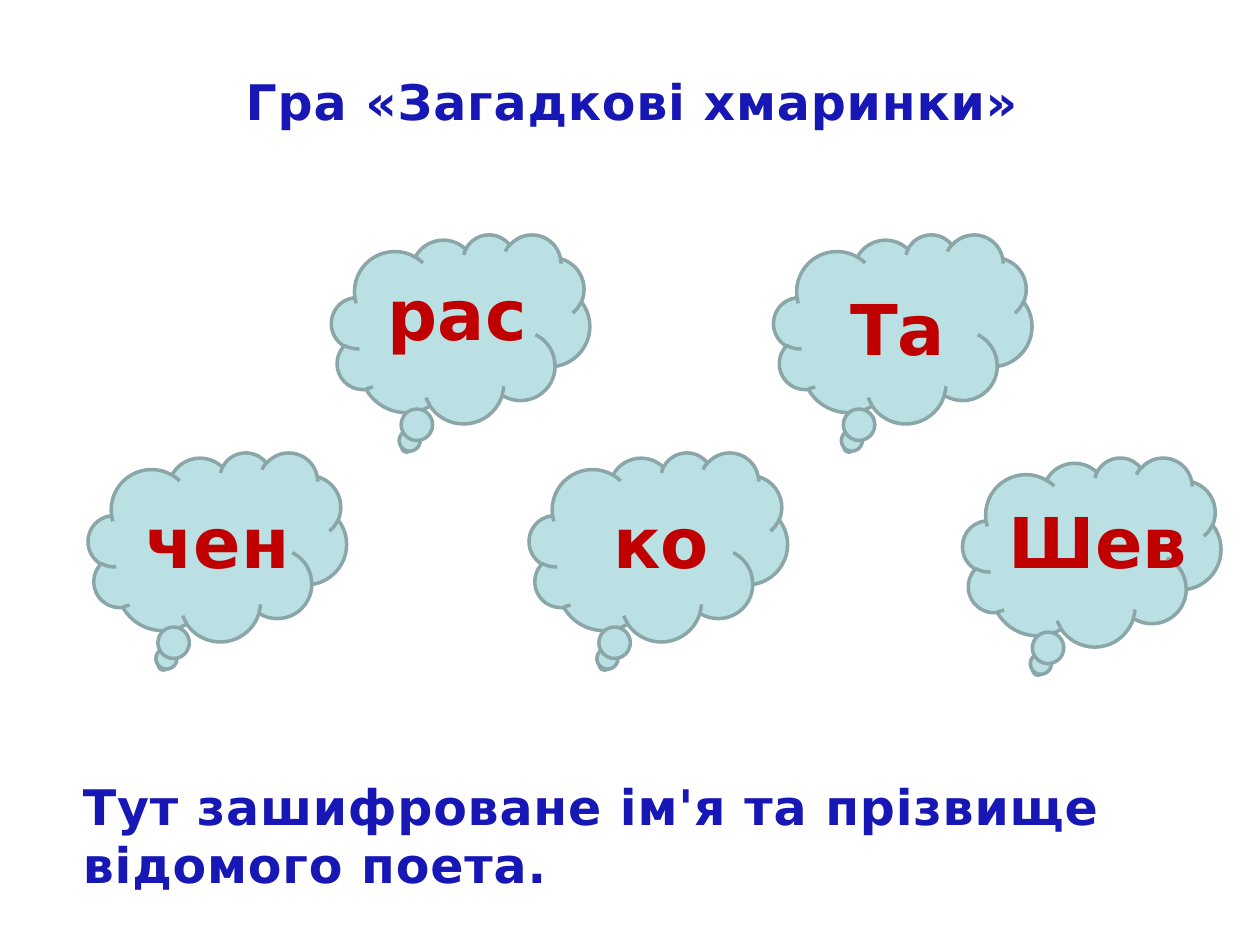
import dataclasses

import pptx
import pptx.dml.color
import pptx.enum.shapes
import pptx.enum.text
import pptx.util

Pt = pptx.util.Pt
RGB = pptx.dml.color.RGBColor.from_string


@dataclasses.dataclass(frozen=True)
class Theme:
    font: str = "DejaVu Sans"
    head: str = "1717B5"
    word: str = "C00000"
    cloud: str = "BBE0E3"
    edge: str = "8AA6A8"
    large: int = 40
    small: int = 28


THEME = Theme()
CLOUD_W, CLOUD_H = 147.6, 108
LABEL_H = 55.4

# cloud left, cloud top, syllable, label left, label top, label width
CLOUDS = [
    (50.4, 258.5, "чен", 76.3, 281.5, 113),
    (302.4, 258.5, "ко", 343.4, 281.5, 108),
    (550.1, 261.4, "Шев", 569.5, 281.5, 127.4),
    (189.4, 133.9, "рас", 214.6, 151.2, 124.6),
    (442.1, 133.9, "Та", 478.8, 159.8, 90.7),
]


def set_all(obj, values):
    for name, value in values.items():
        setattr(obj, name, value)


def place(shape, left, top, width, height):
    box = dict(left=left, top=top, width=width, height=height)
    set_all(shape, {name: Pt(value) for name, value in box.items()})


def write(shape, text, size, color, track=0):
    """Fill a shape with one bold line; track is letter spacing in points."""
    frame = shape.text_frame
    set_all(frame, dict(
        word_wrap=True,
        auto_size=pptx.enum.text.MSO_AUTO_SIZE.NONE,
        vertical_anchor=pptx.enum.text.MSO_ANCHOR.TOP,
    ))
    para = frame.paragraphs[0]
    para.alignment = pptx.enum.text.PP_ALIGN.LEFT
    run = para.add_run()
    run.text = text
    set_all(run.font, dict(name=THEME.font, size=Pt(size), bold=True))
    run.font.color.rgb = RGB(color)
    if track:
        run.font._element.set("spc", str(int(track * 100)))


def add_cloud(slide, left, top):
    kind = pptx.enum.shapes.MSO_SHAPE.CLOUD_CALLOUT
    cloud = slide.shapes.add_shape(
        kind, Pt(left), Pt(top), Pt(CLOUD_W), Pt(CLOUD_H))
    cloud.shadow.inherit = False
    cloud.fill.solid()
    cloud.fill.fore_color.rgb = RGB(THEME.cloud)
    cloud.line.color.rgb = RGB(THEME.edge)
    cloud.line.width = Pt(2)


def add_text(slide, box, *style):
    write(slide.shapes.add_textbox(*map(Pt, box)), *style)


def main():
    deck = pptx.Presentation()
    set_all(deck, dict(slide_width=Pt(720), slide_height=Pt(540)))
    slide = deck.slides.add_slide(deck.slide_layouts.get_by_name("Title Only"))

    title = slide.shapes.title
    place(title, 133.2, 37.4, 538.6, 41)
    write(title, "Гра «Загадкові хмаринки»", THEME.small, THEME.head, 0.5)

    for left, top, *_ in CLOUDS:
        add_cloud(slide, left, top)
    add_text(slide, (40.3, 439.9, 671.8, 74.9),
             "Тут зашифроване ім'я та прізвище відомого поета.",
             THEME.small, THEME.head, 0.5)
    for _, _, word, left, top, width in CLOUDS:
        add_text(slide, (left, top, width, LABEL_H),
                 word, THEME.large, THEME.word)

    deck.save("out.pptx")


if __name__ == "__main__":
    main()
